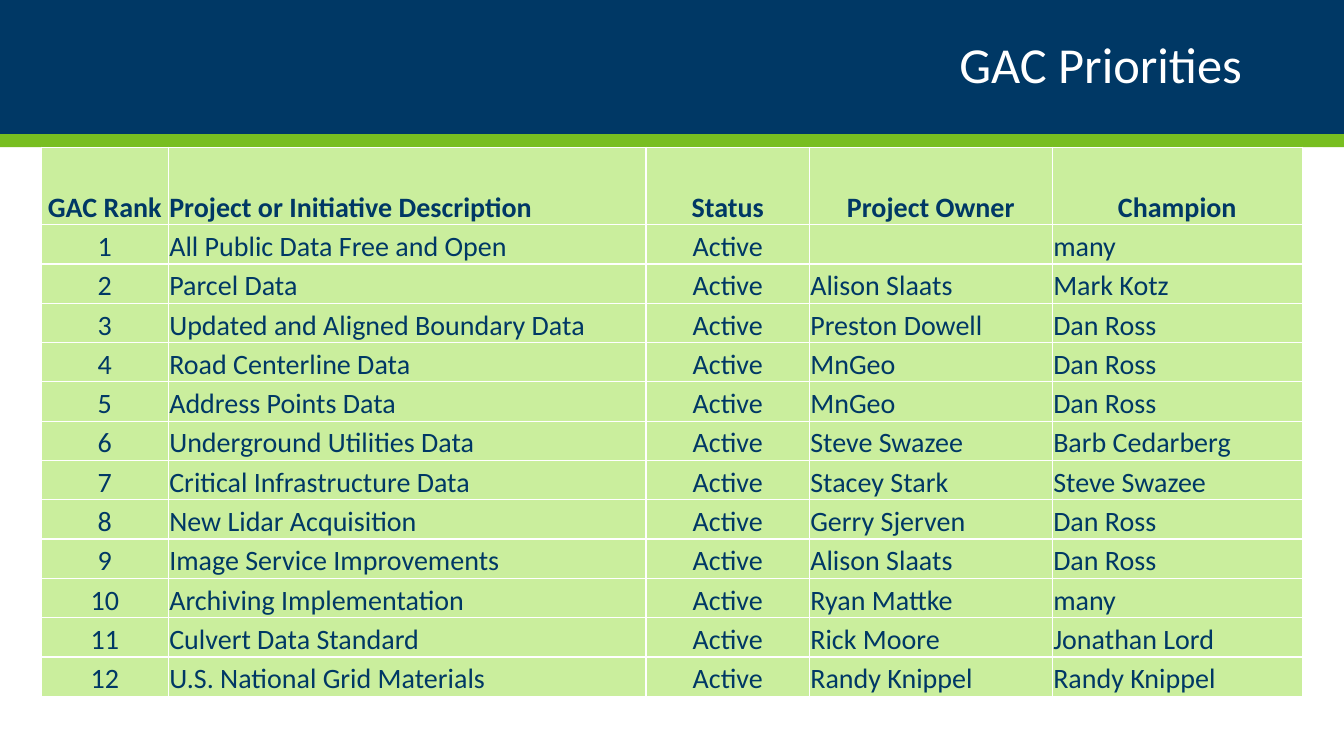
from lxml import etree
from pptx import Presentation
from pptx.dml.color import RGBColor
from pptx.enum.shapes import MSO_SHAPE
from pptx.enum.text import MSO_ANCHOR, PP_ALIGN
from pptx.oxml.ns import qn
from pptx.util import Inches, Pt

RECTANGLE = MSO_SHAPE.RECTANGLE
MIDDLE, BOTTOM = MSO_ANCHOR.MIDDLE, MSO_ANCHOR.BOTTOM
LEFT, CENTER, RIGHT = PP_ALIGN.LEFT, PP_ALIGN.CENTER, PP_ALIGN.RIGHT

UNIT = Inches(0.1)
SLIDE_COLS, SLIDE_ROWS = 133.33, 75
NAVY, GREEN, PALE_GREEN, WHITE = "003865", "78BE21", "CAEE9D", "FFFFFF"

COLUMN_SPANS = [12.6, 47.4, 16.2, 24.1, 24.8]
HEADER_SPAN, ROW_SPAN = 7.7, 3.9
HEADER_ALIGNS = [CENTER, LEFT, CENTER, CENTER, CENTER]
BODY_ALIGNS = [CENTER, LEFT, CENTER, LEFT, LEFT]
CELL_FORMAT = {
    "vertical_anchor": BOTTOM,
    "margin_left": Inches(0.01),
    "margin_right": Inches(0.01),
    "margin_top": Inches(0.01),
    "margin_bottom": 0,
}

HEADINGS = ["GAC Rank", "Project or Initiative Description", "Status", "Project Owner", "Champion"]
PROJECTS = [
    ("All Public Data Free and Open", "", "many"),
    ("Parcel Data", "Alison Slaats", "Mark Kotz"),
    ("Updated and Aligned Boundary Data", "Preston Dowell", "Dan Ross"),
    ("Road Centerline Data", "MnGeo", "Dan Ross"),
    ("Address Points Data", "MnGeo", "Dan Ross"),
    ("Underground Utilities Data", "Steve Swazee", "Barb Cedarberg"),
    ("Critical Infrastructure Data", "Stacey Stark", "Steve Swazee"),
    ("New Lidar Acquisition", "Gerry Sjerven", "Dan Ross"),
    ("Image Service Improvements", "Alison Slaats", "Dan Ross"),
    ("Archiving Implementation", "Ryan Mattke", "many"),
    ("Culvert Data Standard", "Rick Moore", "Jonathan Lord"),
    ("U.S. National Grid Materials", "Randy Knippel", "Randy Knippel"),
]


def grid(*spans):
    return [round(span * UNIT) for span in spans]


def color(hex_value):
    return RGBColor.from_string(hex_value)


def apply(target, values):
    for name, value in values.items():
        setattr(target, name, value)


def write(frame, text, align, size, hex_value, bold=False):
    paragraph = frame.paragraphs[0]
    paragraph.text = text
    paragraph.alignment = align
    apply(paragraph.font, {"name": "Calibri", "size": Pt(size), "bold": bold})
    paragraph.font.color.rgb = color(hex_value)
    return paragraph


def add_band(slide, top, height, hex_value):
    band = slide.shapes.add_shape(RECTANGLE, *grid(0, top, SLIDE_COLS, height))
    band.shadow.inherit = False
    band.fill.solid()
    band.fill.fore_color.rgb = color(hex_value)
    band.line.fill.background()


def add_title(slide, text):
    frame = slide.shapes.add_textbox(*grid(9.2, 1.7, 115, 10)).text_frame
    apply(frame, {"word_wrap": True, "vertical_anchor": MIDDLE})
    write(frame, text, RIGHT, 36, WHITE).line_spacing = 0.9


def add_borders(cell, hex_value):
    properties = cell._tc.get_or_add_tcPr()
    for index, side in enumerate(("a:lnL", "a:lnR", "a:lnT", "a:lnB")):
        border = etree.Element(qn(side), w=str(Pt(1)))
        fill = etree.SubElement(border, qn("a:solidFill"))
        etree.SubElement(fill, qn("a:srgbClr"), val=hex_value)
        properties.insert(index, border)


def fill_cell(cell, text, align, bold):
    apply(cell, CELL_FORMAT)
    cell.fill.solid()
    cell.fill.fore_color.rgb = color(PALE_GREEN)
    add_borders(cell, WHITE)
    write(cell.text_frame, text, align, 20, NAVY, bold)


def add_priorities(slide):
    rows = [HEADINGS]
    for rank, (project, owner, champion) in enumerate(PROJECTS, 1):
        rows.append([str(rank), project, "Active", owner, champion])
    row_spans = [HEADER_SPAN] + [ROW_SPAN] * len(PROJECTS)
    area = grid(4.1, 14.6, sum(COLUMN_SPANS), sum(row_spans))
    table = slide.shapes.add_table(len(rows), len(HEADINGS), *area).table
    for column, width in zip(table.columns, grid(*COLUMN_SPANS)):
        column.width = width
    for row, height in zip(table.rows, grid(*row_spans)):
        row.height = height
    for row_index, texts in enumerate(rows):
        is_header = row_index == 0
        aligns = HEADER_ALIGNS if is_header else BODY_ALIGNS
        for column_index, (text, align) in enumerate(zip(texts, aligns)):
            fill_cell(table.cell(row_index, column_index), text, align, is_header)


def main():
    deck = Presentation()
    deck.slide_width, deck.slide_height = grid(SLIDE_COLS, SLIDE_ROWS)
    slide = deck.slides.add_slide(deck.slide_layouts[6])
    add_band(slide, 0, 13.3, NAVY)
    add_band(slide, 13.3, 1.3, GREEN)
    add_title(slide, "GAC Priorities")
    add_priorities(slide)
    deck.save("out.pptx")


if __name__ == "__main__":
    main()
